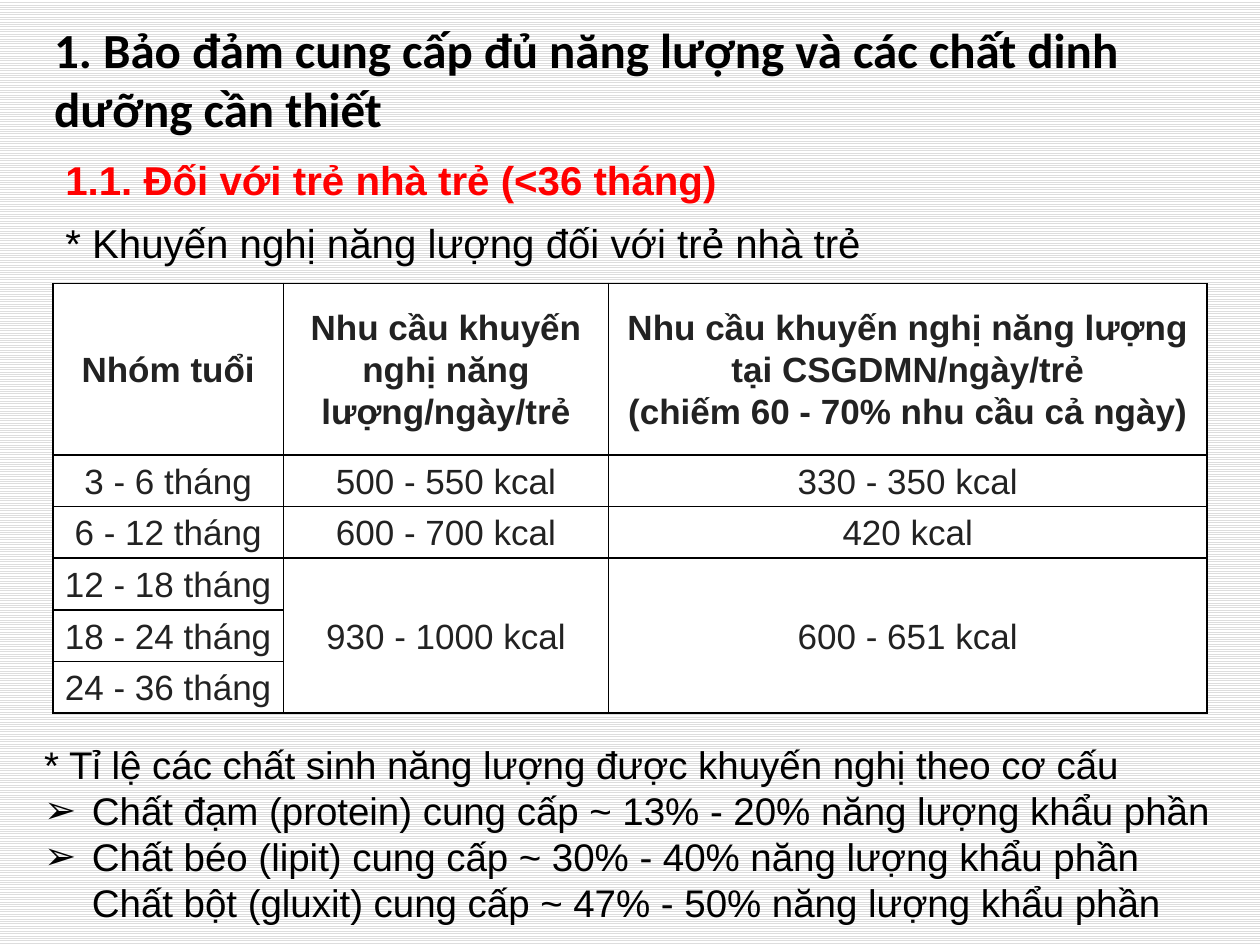
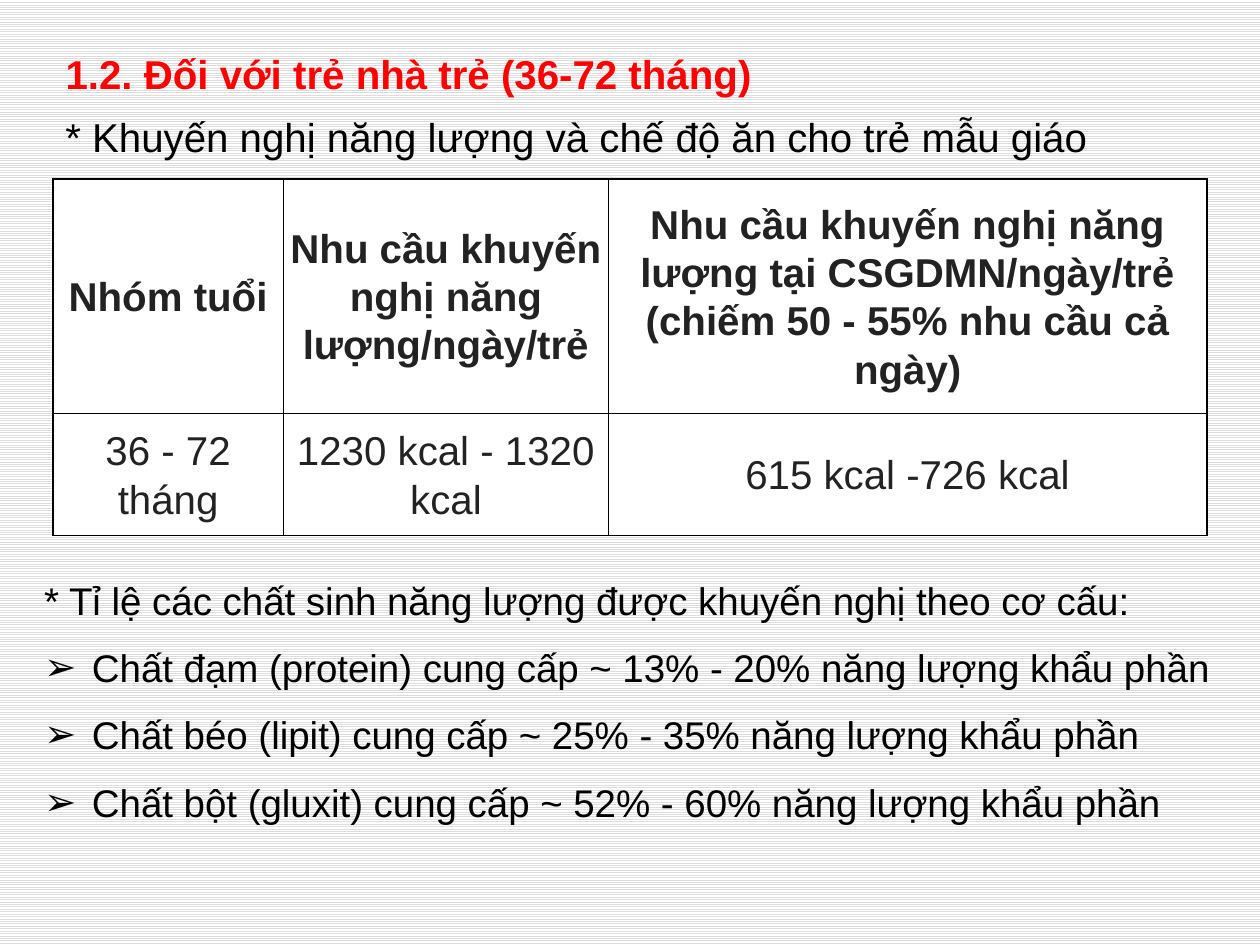
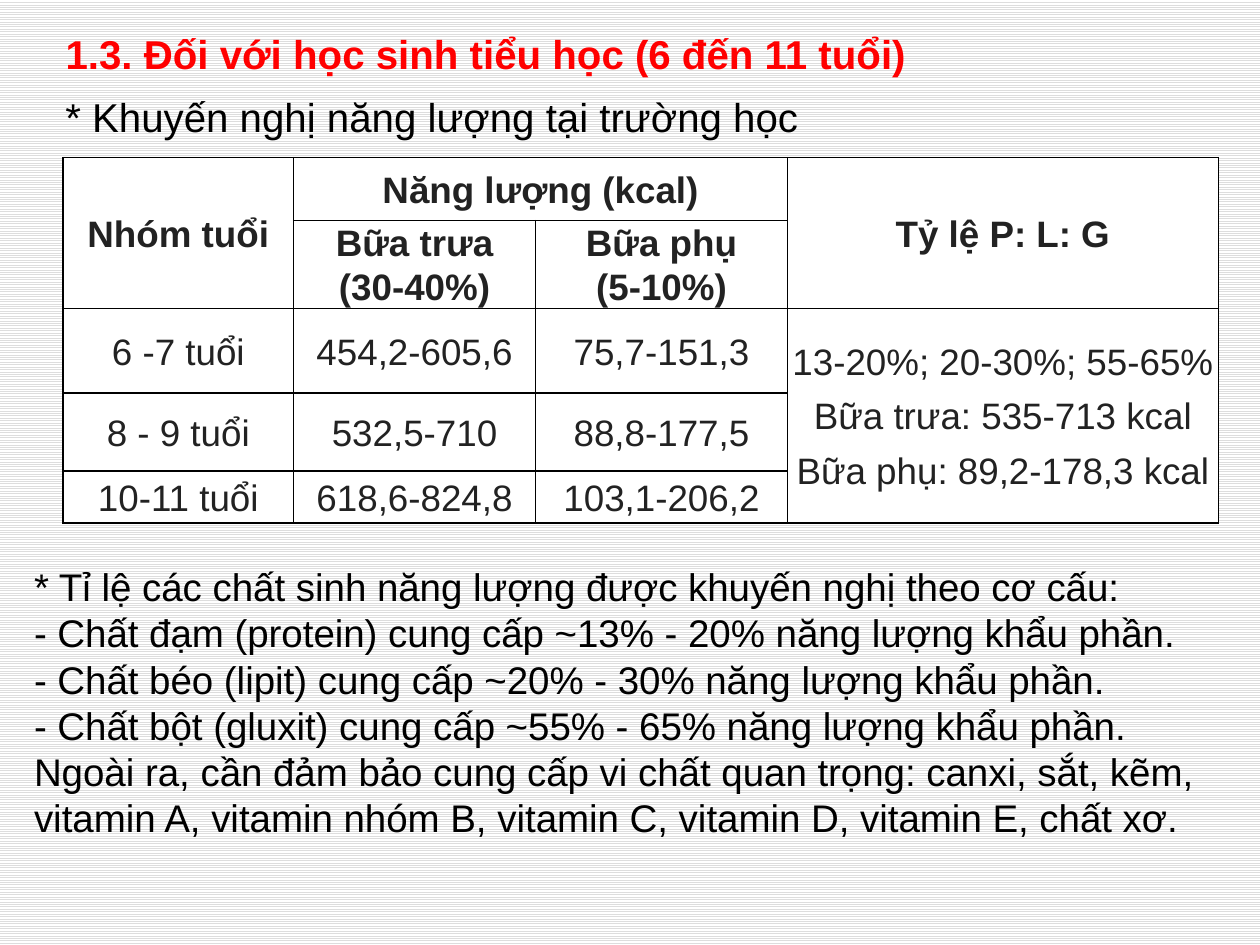
from dataclasses import dataclass

from lxml import etree
from pptx import Presentation
from pptx.dml.color import RGBColor
from pptx.enum.dml import MSO_PATTERN
from pptx.enum.text import MSO_ANCHOR, MSO_AUTO_SIZE, PP_ALIGN
from pptx.oxml.ns import qn
from pptx.util import Inches, Pt

LEFT, CENTER = PP_ALIGN.LEFT, PP_ALIGN.CENTER
TOP, MIDDLE = MSO_ANCHOR.TOP, MSO_ANCHOR.MIDDLE
NO_AUTOFIT = MSO_AUTO_SIZE.NONE
LIGHT_HORIZONTAL = MSO_PATTERN.LIGHT_HORIZONTAL
TITLE_AND_CONTENT = 1


@dataclass(frozen=True)
class Theme:
    black: str = "000000"
    red: str = "FF0000"
    cell_text: str = "222222"
    white: str = "FFFFFF"
    stripe: str = "DDDDDD"
    title_font: str = "Calibri"
    text_font: str = "Arial"
    title_size: int = 28
    section_size: int = 23
    list_size: int = 22
    border_width: int = 1
    cell_spacing: float = 1.07
    cell_space_after: int = 6
    list_indent: float = 0.38


@dataclass(frozen=True)
class Box:
    left: float
    top: float
    width: float
    height: float


THEME = Theme()


def color(value):
    return RGBColor.from_string(value)


def place(shape, box):
    shape.left, shape.top = Inches(box.left), Inches(box.top)
    shape.width, shape.height = Inches(box.width), Inches(box.height)


def style_font(paragraph, size, fill, bold=False, name=THEME.text_font):
    font = paragraph.font
    font.name, font.size, font.bold = name, Pt(size), bold
    font.color.rgb = color(fill)


def write_line(shape, box, text, size, fill, bold=False, name=THEME.text_font):
    place(shape, box)
    frame = shape.text_frame
    frame.word_wrap = True
    frame.auto_size = NO_AUTOFIT
    frame.vertical_anchor = MIDDLE
    paragraph = frame.paragraphs[0]
    paragraph.text = text
    paragraph.alignment = LEFT
    style_font(paragraph, size, fill, bold, name)


def add_text_box(slide):
    return slide.shapes.add_textbox(0, 0, 0, 0)


def add_section(slide, box, heading, note, heading_shape):
    half = box.height / 2
    heading_box = Box(box.left, box.top, box.width, half)
    note_box = Box(box.left, box.top + half, box.width, half)
    write_line(heading_shape, heading_box, heading, THEME.section_size, THEME.red, True)
    write_line(add_text_box(slide), note_box, note, THEME.section_size, THEME.black)


def set_list_marker(paragraph, marker):
    properties = paragraph._p.get_or_add_pPr()
    indent = Inches(THEME.list_indent) if marker else 0
    properties.set("marL", str(indent))
    properties.set("indent", str(-indent))
    if marker:
        etree.SubElement(properties, qn("a:buChar")).set("char", marker)
    else:
        etree.SubElement(properties, qn("a:buNone"))


def add_ratio_list(slide, box, lead, items, marker=None, spacing=0):
    body = slide.placeholders[1]
    place(body, box)
    frame = body.text_frame
    frame.auto_size = NO_AUTOFIT
    frame.vertical_anchor = TOP
    for index, text in enumerate([lead, *items]):
        paragraph = frame.add_paragraph() if index else frame.paragraphs[0]
        paragraph.text = text
        set_list_marker(paragraph, marker if index else None)
        paragraph.alignment = LEFT
        paragraph.space_before = paragraph.space_after = Pt(spacing)
        style_font(paragraph, THEME.list_size, THEME.black)


def style_cell(cell):
    properties = cell._tc.get_or_add_tcPr()
    for side in ("a:lnL", "a:lnR", "a:lnT", "a:lnB"):
        line = etree.SubElement(properties, qn(side), w=str(Pt(THEME.border_width)))
        fill = etree.SubElement(line, qn("a:solidFill"))
        etree.SubElement(fill, qn("a:srgbClr"), val=THEME.black)
    cell.fill.solid()
    cell.fill.fore_color.rgb = color(THEME.white)
    cell.margin_left = cell.margin_right = cell.margin_top = cell.margin_bottom = 0
    cell.vertical_anchor = MIDDLE


def write_cell(cell, content, size, bold):
    texts = content if isinstance(content, list) else [content]
    for index, text in enumerate(texts):
        frame = cell.text_frame
        paragraph = frame.add_paragraph() if index else frame.paragraphs[0]
        paragraph.text = text
        paragraph.alignment = CENTER
        paragraph.line_spacing = THEME.cell_spacing
        paragraph.space_after = Pt(THEME.cell_space_after)
        style_font(paragraph, size, THEME.cell_text, bold)


def add_energy_table(slide, box, widths, heights, rows, size, header_rows=1, merges=()):
    frame = slide.shapes.add_table(len(heights), len(widths), Inches(box.left),
                                   Inches(box.top), Inches(box.width), Inches(box.height))
    table = frame.table
    table.first_row = table.horz_banding = False
    for column, width in zip(table.columns, widths):
        column.width = Inches(width)
    for row, height in zip(table.rows, heights):
        row.height = Inches(height)
    for row_index, contents in enumerate(rows):
        for column_index, content in enumerate(contents):
            cell = table.cell(row_index, column_index)
            style_cell(cell)
            write_cell(cell, content or "", size, row_index < header_rows)
    for first, last in merges:
        table.cell(*first).merge(table.cell(*last))


def add_slide(presentation):
    return presentation.slides.add_slide(presentation.slide_layouts[TITLE_AND_CONTENT])


AGE_WIDTHS = [1.83, 2.58, 4.75]
DAILY_NEED = "Nhu cầu khuyến nghị năng lượng/ngày/trẻ"
SCHOOL_NEED = "Nhu cầu khuyến nghị năng lượng tại CSGDMN/ngày/trẻ\n(chiếm {} nhu cầu cả ngày)"
RATIO_LEAD = "* Tỉ lệ các chất sinh năng lượng được khuyến nghị theo cơ cấu"


def header(share):
    return ["Nhóm tuổi", DAILY_NEED, SCHOOL_NEED.format(share)]


def build_nursery_slide(presentation):
    slide = add_slide(presentation)
    write_line(slide.shapes.title, Box(0.33, 0, 9.33, 1.25),
               "1. Bảo đảm cung cấp đủ năng lượng và các chất dinh dưỡng cần thiết",
               THEME.title_size, THEME.black, True, THEME.title_font)
    rows = [
        header("60 - 70%"),
        ["3 - 6 tháng", "500 - 550 kcal", "330 - 350 kcal"],
        ["6 - 12 tháng", "600 - 700 kcal", "420 kcal"],
        ["12 - 18 tháng", "930 - 1000 kcal", "600 - 651 kcal"],
        ["18 - 24 tháng", None, None],
        ["24 - 36 tháng", None, None],
    ]
    add_energy_table(slide, Box(0.42, 2.25, 9.17, 3.42), AGE_WIDTHS, [1.36] + [0.41] * 5,
                     rows, 20, merges=[((3, 1), (5, 1)), ((3, 2), (5, 2))])
    add_section(slide, Box(0.42, 1.17, 9.5, 1), "1.1. Đối với trẻ nhà trẻ (<36 tháng)",
                "* Khuyến nghị năng lượng đối với trẻ nhà trẻ", add_text_box(slide))
    add_ratio_list(slide, Box(0.25, 5.83, 9.5, 1.58), RATIO_LEAD, [
        "Chất đạm (protein) cung cấp ~ 13% - 20% năng lượng khẩu phần",
        "Chất béo (lipit) cung cấp ~ 30% - 40% năng lượng khẩu phần "
        "Chất bột (gluxit) cung cấp ~ 47% - 50% năng lượng khẩu phần",
    ], marker="➢")


def build_kindergarten_slide(presentation):
    slide = add_slide(presentation)
    rows = [
        header("50 - 55%"),
        ["36 - 72 tháng", "1230 kcal - 1320 kcal", "615 kcal -726 kcal"],
    ]
    add_energy_table(slide, Box(0.42, 1.42, 9.17, 2.83), AGE_WIDTHS, [1.86, 0.97], rows, 23)
    add_section(slide, Box(0.42, 0.33, 9.5, 1), "1.2. Đối với trẻ nhà trẻ (36-72 tháng)",
                "* Khuyến nghị năng lượng và chế độ ăn cho trẻ mẫu giáo", slide.shapes.title)
    add_ratio_list(slide, Box(0.25, 4.53, 9.5, 2.09), RATIO_LEAD + ":", [
        "Chất đạm (protein) cung cấp ~ 13% - 20% năng lượng khẩu phần",
        "Chất béo (lipit) cung cấp ~ 25% - 35% năng lượng khẩu phần",
        "Chất bột (gluxit) cung cấp ~ 52% - 60% năng lượng khẩu phần",
    ], marker="➢", spacing=6)


def build_primary_school_slide(presentation):
    slide = add_slide(presentation)
    rows = [
        ["Nhóm tuổi", "Năng lượng (kcal)", None, "Tỷ lệ P: L: G"],
        [None, "Bữa trưa\n(30-40%)", "Bữa phụ\n(5-10%)", None],
        ["6 -7 tuổi", "454,2-605,6", "75,7-151,3",
         ["13-20%; 20-30%; 55-65%", "Bữa trưa: 535-713 kcal", "Bữa phụ: 89,2-178,3 kcal"]],
        ["8 - 9 tuổi", "532,5-710", "88,8-177,5", None],
        ["10-11 tuổi", "618,6-824,8", "103,1-206,2", None],
    ]
    merges = [((0, 0), (1, 0)), ((0, 1), (0, 2)), ((0, 3), (1, 3)), ((2, 3), (4, 3))]
    add_energy_table(slide, Box(0.5, 1.25, 9.17, 2.95), [1.83, 1.92, 2, 3.42],
                     [0.5, 0.7, 0.67, 0.62, 0.41], rows, 21, header_rows=2, merges=merges)
    add_section(slide, Box(0.42, 0.17, 9.5, 1), "1.3. Đối với học sinh tiểu học (6 đến 11 tuổi)",
                "* Khuyến nghị năng lượng tại trường học", slide.shapes.title)
    add_ratio_list(slide, Box(0.17, 4.42, 9.5, 2.32), RATIO_LEAD + ":", [
        "- Chất đạm (protein) cung cấp ~13% - 20% năng lượng khẩu phần.",
        "- Chất béo (lipit) cung cấp ~20% - 30% năng lượng khẩu phần.",
        "- Chất bột (gluxit) cung cấp ~55% - 65% năng lượng khẩu phần.",
        "Ngoài ra, cần đảm bảo cung cấp vi chất quan trọng: canxi, sắt, kẽm, "
        "vitamin A, vitamin nhóm B, vitamin C, vitamin D, vitamin E, chất xơ.",
    ])


def main():
    presentation = Presentation()
    presentation.slide_width, presentation.slide_height = Inches(10), Inches(7.5)
    background = presentation.slide_master.background.fill
    background.patterned()
    background.pattern = LIGHT_HORIZONTAL
    background.fore_color.rgb = color(THEME.stripe)
    background.back_color.rgb = color(THEME.white)
    build_nursery_slide(presentation)
    build_kindergarten_slide(presentation)
    build_primary_school_slide(presentation)
    presentation.save("out.pptx")


if __name__ == "__main__":
    main()
